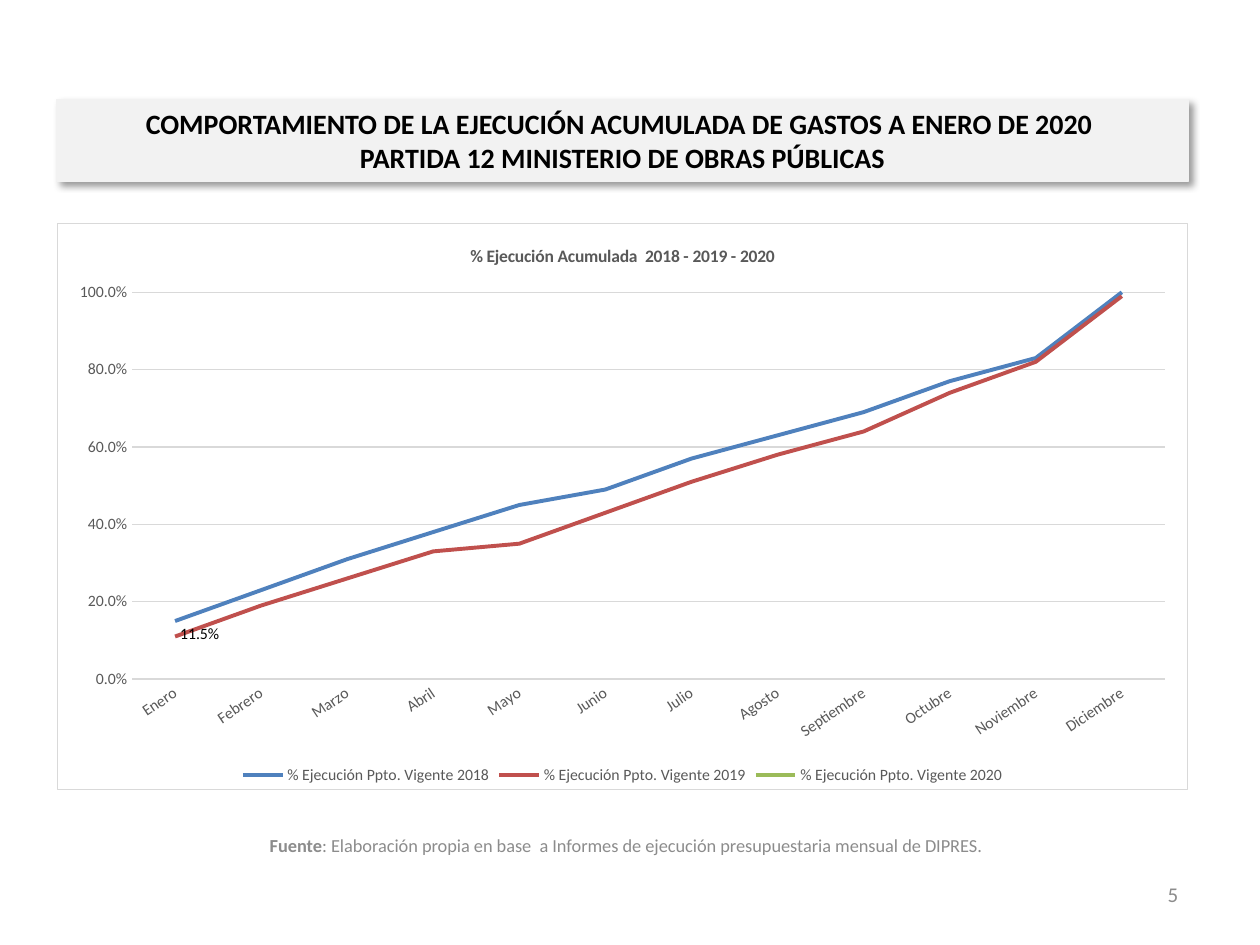
"""Builds the slide on accumulated budget execution, with its line chart."""
from lxml.etree import fromstring
from pptx import Presentation
from pptx.chart.data import CategoryChartData
from pptx.dml.color import RGBColor
from pptx.enum.chart import XL_CHART_TYPE, XL_LABEL_POSITION, XL_LEGEND_POSITION, XL_TICK_MARK
from pptx.enum.text import MSO_ANCHOR, MSO_AUTO_SIZE, PP_ALIGN
from pptx.util import Inches, Pt

BLACK = RGBColor(0x00, 0x00, 0x00)
PALE = RGBColor(0xF2, 0xF2, 0xF2)
GREY = RGBColor(0x8C, 0x8C, 0x8C)
DARK = RGBColor(0x59, 0x59, 0x59)
RULE = RGBColor(0xD9, 0xD9, 0xD9)
BLUE = RGBColor(0x4F, 0x81, 0xBD)
RED = RGBColor(0xC0, 0x50, 0x4D)
GREEN = RGBColor(0x9B, 0xBB, 0x59)

TITLE = ("COMPORTAMIENTO DE LA EJECUCIÓN ACUMULADA DE GASTOS A ENERO DE 2020 "
         "\vPARTIDA 12 MINISTERIO DE OBRAS PÚBLICAS")
HEAD = "% Ejecución Acumulada  2018 - 2019 - 2020"
NOTES = [
    ((0.61, 6.51, 8.72, 0.4), PP_ALIGN.CENTER, 10.5,
     [("Fuente", True),
      (": Elaboración propia en base  a Informes de ejecución presupuestaria mensual de DIPRES.",
       False)]),
    ((7.12, 6.9, 2.33, 0.4), PP_ALIGN.RIGHT, 12, [("5", False)]),
]
MONTHS = ["Enero", "Febrero", "Marzo", "Abril", "Mayo", "Junio", "Julio", "Agosto",
          "Septiembre", "Octubre", "Noviembre", "Diciembre"]
YEARS = [
    (2018, BLUE, [0.15, 0.23, 0.31, 0.38, 0.45, 0.49, 0.57, 0.63, 0.69, 0.77, 0.83, 1]),
    (2019, RED, [0.11, 0.19, 0.26, 0.33, 0.35, 0.43, 0.51, 0.58, 0.64, 0.74, 0.82, 0.99]),
    (2020, GREEN, [0.115]),
]
LEFT, WIDTH = 0.45, 8.98
FORM = "0.0%"
NS = "http://schemas.openxmlformats.org/drawingml/2006/"
SHADOW = f"""<a:effectLst xmlns:a="{NS}main"><a:outerShdw blurRad="50800" dist="38100"
 dir="2700000" algn="tl" rotWithShape="0"><a:srgbClr val="000000"><a:alpha val="40000"/>
</a:srgbClr></a:outerShdw></a:effectLst>"""
FRAME = f"""<c:spPr xmlns:c="{NS}chart" xmlns:a="{NS}main"><a:solidFill>
<a:srgbClr val="FFFFFF"/></a:solidFill><a:ln w="9525"><a:solidFill>
<a:srgbClr val="D9D9D9"/></a:solidFill></a:ln></c:spPr>"""


def put(item, **vals):
    for key, val in vals.items():
        setattr(item, key, val)


def style(font, size, color, bold=False):
    put(font, name="Calibri", size=Pt(size), bold=bold)
    font.color.rgb = color


def stroke(line, color, width):
    line.color.rgb = color
    line.width = Pt(width)


def add_title(slide):
    shape = slide.shapes.title
    put(shape, left=Inches(LEFT), top=Inches(0.79), width=Inches(WIDTH), height=Inches(0.65))
    shape.fill.solid()
    shape.fill.fore_color.rgb = PALE
    stroke(shape.line, PALE, 0.75)
    shape._element.spPr.append(fromstring(SHADOW))
    frame = shape.text_frame
    put(frame, text=TITLE, word_wrap=True, auto_size=MSO_AUTO_SIZE.NONE,
        vertical_anchor=MSO_ANCHOR.MIDDLE, margin_left=Inches(0.11), margin_right=Inches(0.11),
        margin_top=Inches(0.05), margin_bottom=Inches(0.05))
    para = frame.paragraphs[0]
    put(para, alignment=PP_ALIGN.CENTER, space_before=Pt(0))
    for run in para.runs:
        style(run.font, 16, BLACK, True)


def add_note(slide, box, align, size, runs):
    frame = slide.shapes.add_textbox(*map(Inches, box)).text_frame
    put(frame, word_wrap=True, vertical_anchor=MSO_ANCHOR.MIDDLE)
    para = frame.paragraphs[0]
    para.alignment = align
    for text, bold in runs:
        run = para.add_run()
        run.text = text
        style(run.font, size, GREY, bold)


def add_lines(slide):
    data = CategoryChartData(number_format=FORM)
    data.categories = MONTHS
    for year, _, vals in YEARS:
        data.add_series(f"% Ejecución Ppto. Vigente {year}", vals)
    box = map(Inches, (LEFT, 1.77, WIDTH, 4.5))
    chart = slide.shapes.add_chart(XL_CHART_TYPE.LINE, *box, data).chart
    style(chart.font, 10, BLACK)
    chart._chartSpace.chart.addnext(fromstring(FRAME))
    chart.has_title = True
    head = chart.chart_title.text_frame
    head.text = HEAD
    style(head.paragraphs[0].runs[0].font, 10, DARK, True)
    chart.has_legend = True
    put(chart.legend, position=XL_LEGEND_POSITION.BOTTOM, include_in_layout=False)
    style(chart.legend.font, 9, DARK)

    cat, val = chart.category_axis, chart.value_axis
    for axis in (cat, val):
        put(axis, major_tick_mark=XL_TICK_MARK.NONE, minor_tick_mark=XL_TICK_MARK.NONE)
        style(axis.tick_labels.font, 9, DARK)
    stroke(cat.format.line, RULE, 1)
    cat._element.txPr.bodyPr.set("rot", "-2040000")
    put(val, minimum_scale=0, maximum_scale=1, major_unit=0.2, has_major_gridlines=True)
    put(val.tick_labels, number_format=FORM, number_format_is_linked=False)
    val.format.line.fill.background()
    stroke(val.major_gridlines.format.line, RULE, 0.75)

    plot = chart.plots[0]
    plot.vary_by_categories = False
    for line, (_, color, _) in zip(plot.series, YEARS):
        line.smooth = False
        stroke(line.format.line, color, 2.25)
    tags = plot.series[2].data_labels
    put(tags, show_value=True, number_format=FORM, number_format_is_linked=False,
        position=XL_LABEL_POSITION.RIGHT)
    style(tags.font, 9, BLACK)


def main():
    deck = Presentation()
    put(deck, slide_width=Inches(10), slide_height=Inches(7.5))
    slide = deck.slides.add_slide(deck.slide_layouts[5])
    for note in NOTES:
        add_note(slide, *note)
    add_title(slide)
    add_lines(slide)
    deck.save("out.pptx")


if __name__ == "__main__":
    main()
